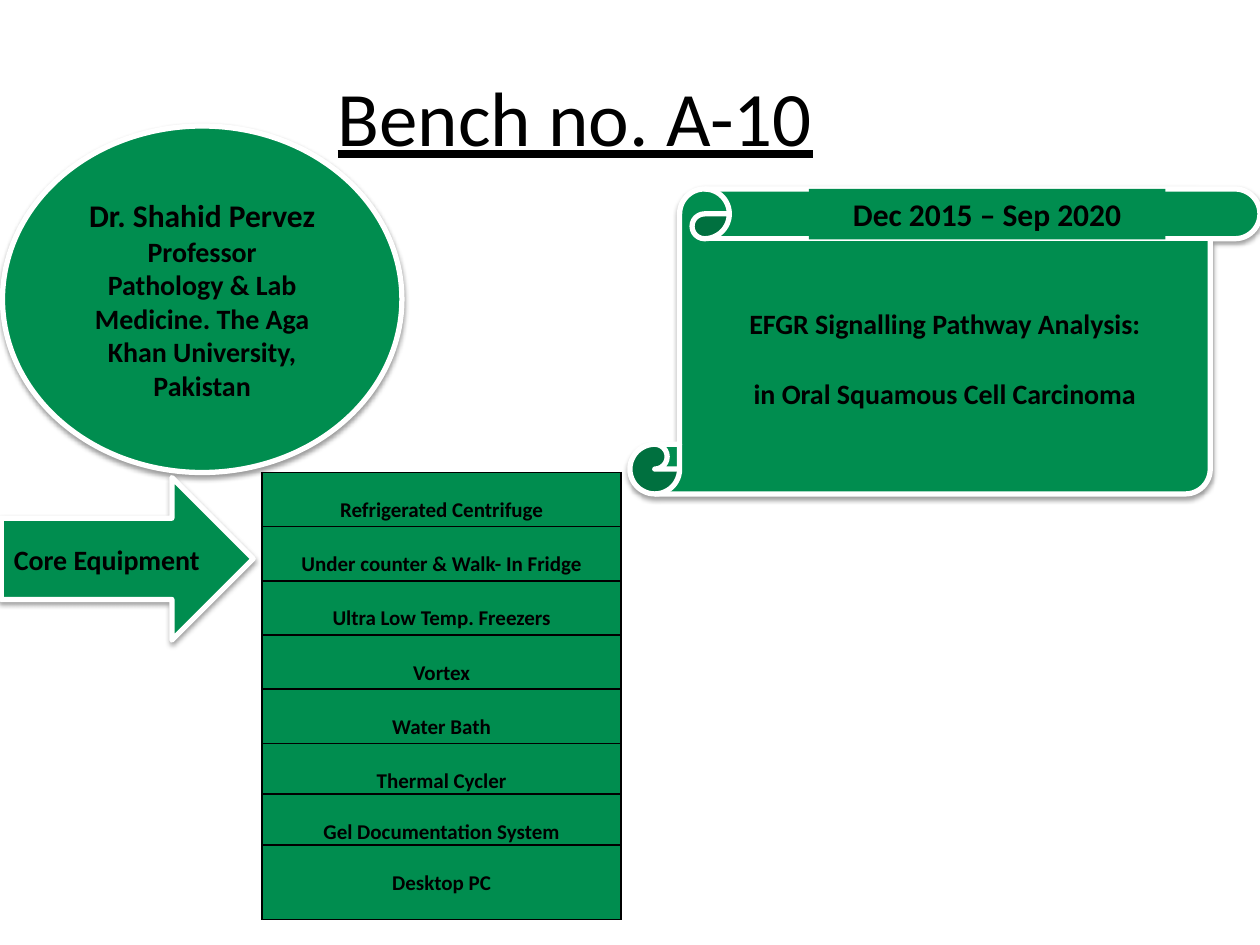
from lxml.etree import SubElement
from pptx import Presentation
from pptx.dml.color import RGBColor
from pptx.enum.shapes import MSO_SHAPE
from pptx.enum.text import MSO_ANCHOR, PP_ALIGN
from pptx.oxml import parse_xml
from pptx.oxml.ns import nsdecls, qn
from pptx.util import Inches, Pt

COLORS = {"green": "008D4F", "white": "FFFFFF", "black": "000000"}
FONT = "Calibri"
EQUIPMENT = [
    ("Refrigerated Centrifuge", 0.43),
    ("Under counter & Walk- In Fridge", 0.43),
    ("Ultra Low Temp. Freezers", 0.43),
    ("Vortex", 0.43),
    ("Water Bath", 0.43),
    ("Thermal Cycler", 0.4),
    ("Gel Documentation System", 0.4),
    ("Desktop PC", 0.59),
]


def color(name):
    return RGBColor.from_string(COLORS[name])


def write_text(text_frame, lines, bold=True, underline=None):
    """Write one centred paragraph for each (text, size) pair."""
    text_frame.text = "\n".join(text for text, _ in lines)
    for paragraph, (_, size) in zip(text_frame.paragraphs, lines):
        paragraph.alignment = PP_ALIGN.CENTER
        for run in paragraph.runs:
            run.font.name = FONT
            run.font.size = Pt(size)
            run.font.bold = bold
            run.font.underline = underline
            run.font.color.rgb = color("black")


def add_soft_shadow(shape):
    shape._element.spPr.append(parse_xml(
        f'<a:effectLst {nsdecls("a")}>'
        f'<a:outerShdw blurRad="{Pt(3.1)}" dist="{Pt(1.6)}" dir="5400000" rotWithShape="0">'
        f'<a:srgbClr val="{COLORS["black"]}"><a:alpha val="38000"/></a:srgbClr>'
        '</a:outerShdw></a:effectLst>'))


def add_green_shape(slide, kind, box, lines, outlined=True):
    shape = slide.shapes.add_shape(kind, *map(Inches, box))
    shape.fill.solid()
    shape.fill.fore_color.rgb = color("green")
    if outlined:
        shape.line.color.rgb = color("white")
        shape.line.width = Pt(3)
        add_soft_shadow(shape)
    else:
        shape.line.fill.background()
        shape.shadow.inherit = False
    shape.text_frame.word_wrap = True
    shape.text_frame.vertical_anchor = MSO_ANCHOR.MIDDLE
    write_text(shape.text_frame, lines)
    return shape


def add_project_scroll(slide):
    scroll = add_green_shape(slide, MSO_SHAPE.VERTICAL_SCROLL, (5, 1.5, 5, 2.42), [
        ("EFGR Signalling Pathway Analysis:", 16),
        ("in Oral Squamous Cell Carcinoma", 16),
    ])
    scroll.adjustments[0] = 0.163
    scroll.text_frame.margin_top = Inches(0.12)
    scroll.text_frame.paragraphs[1].space_before = Pt(21)


def set_cell_borders(cell):
    properties = cell._tc.get_or_add_tcPr()
    for index, side in enumerate(("lnL", "lnR", "lnT", "lnB")):
        border = parse_xml(f'<a:{side} {nsdecls("a")} w="{Pt(1)}"/>')
        fill = SubElement(border, qn("a:solidFill"))
        SubElement(fill, qn("a:srgbClr"), val=COLORS["black"])
        properties.insert(index, border)


def add_equipment_table(slide):
    height = sum(row_height for _, row_height in EQUIPMENT)
    frame = slide.shapes.add_table(
        len(EQUIPMENT), 1, Inches(2.08), Inches(3.75), Inches(2.85), Inches(height))
    table = frame.table
    for row, (name, row_height) in zip(table.rows, EQUIPMENT):
        row.height = Inches(row_height)
        cell = row.cells[0]
        cell.fill.solid()
        cell.fill.fore_color.rgb = color("green")
        cell.margin_left = cell.margin_right = Inches(0.07)
        cell.margin_top, cell.margin_bottom = Inches(0.2), 0
        write_text(cell.text_frame, [(name, 12)])
        set_cell_borders(cell)


def add_title(slide):
    title = slide.shapes.add_textbox(Inches(2.56), Inches(0.5), Inches(4.01), Inches(0.84))
    title.text_frame.word_wrap = False
    write_text(title.text_frame, [("Bench no. A-10", 44)], bold=False, underline=True)


def main():
    presentation = Presentation()
    presentation.slide_width = Inches(10)
    presentation.slide_height = Inches(7.5)
    slide = presentation.slides.add_slide(presentation.slide_layouts[6])

    add_green_shape(slide, MSO_SHAPE.OVAL, (0.02, 1, 3.17, 2.75), [
        ("Dr. Shahid Pervez", 18),
        ("Professor", 16),
        ("Pathology & Lab Medicine. The Aga Khan University, Pakistan", 16),
    ])
    add_project_scroll(slide)
    add_green_shape(slide, MSO_SHAPE.RECTANGLE, (6.42, 1.5, 2.83, 0.4),
                    [("Dec 2015 – Sep 2020", 18)], outlined=False)
    add_green_shape(slide, MSO_SHAPE.RIGHT_ARROW, (0.01, 3.79, 2, 1.29),
                    [("Core Equipment", 16)])
    add_equipment_table(slide)
    add_title(slide)
    presentation.save("out.pptx")


if __name__ == "__main__":
    main()
